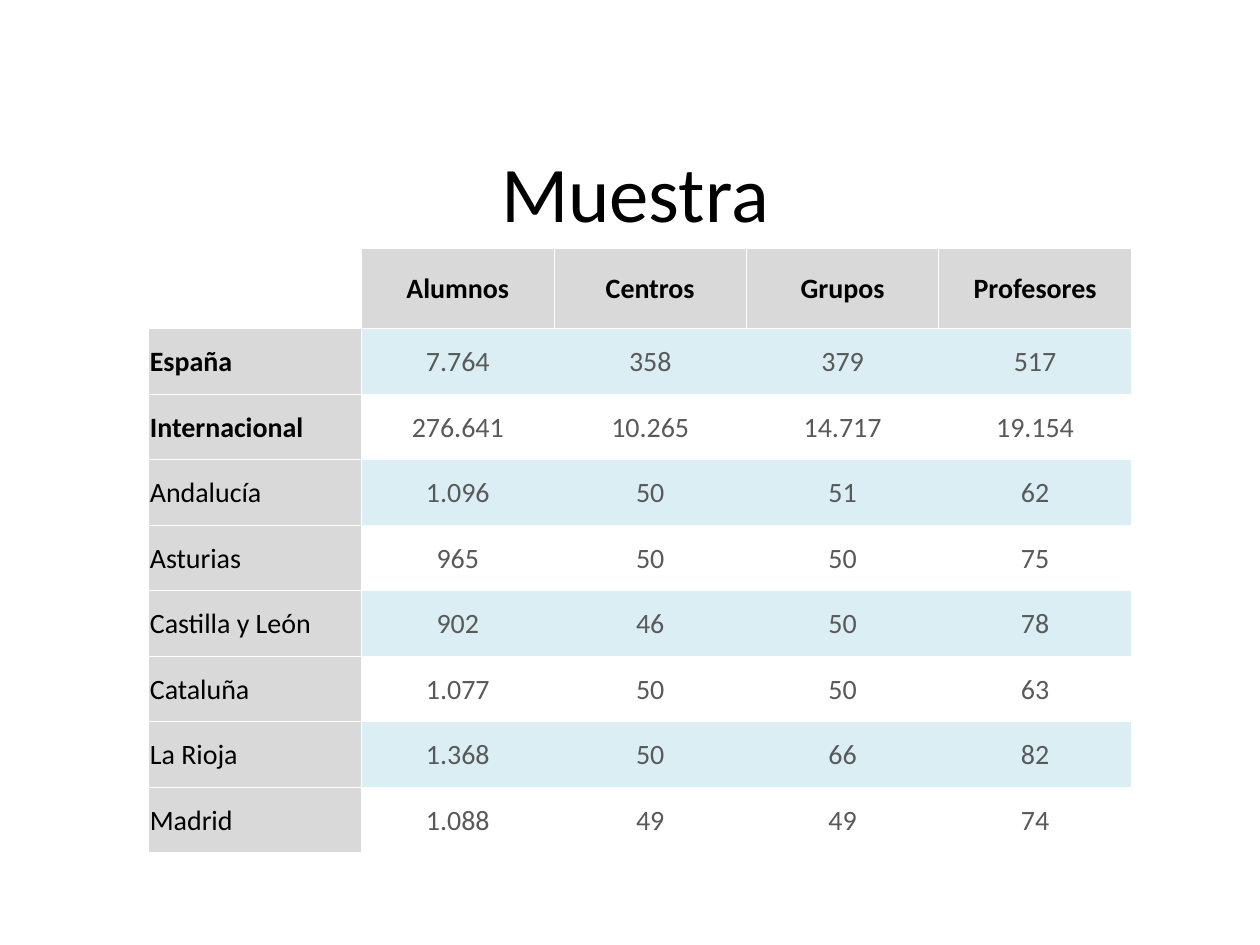
from dataclasses import dataclass

from lxml.etree import SubElement
from pptx import Presentation
from pptx.dml.color import RGBColor as Rgb
from pptx.enum.text import MSO_ANCHOR as Anchor, PP_ALIGN as Align
from pptx.oxml.ns import qn
from pptx.util import Inches, Pt


@dataclass(frozen=True)
class Theme:
    font: str = "Calibri"
    title_size: float = 45
    table_size: float = 16
    ink: str = "000000"
    figure_ink: str = "595959"
    heading_fill: str = "D9D9D9"
    band_fill: str = "DBEEF4"
    rule: str = "FFFFFF"
    rule_width: float = 0.5
    plain_style: str = "{2D5ABB26-0587-4C30-8999-92F81FD0307C}"


@dataclass(frozen=True)
class Grid:
    left: float = 1.18
    top: float = 1.97
    width: float = 7.8
    height: float = 4.8
    label_width: float = 1.69
    header_height: float = 0.64


@dataclass(frozen=True)
class Region:
    name: str
    figures: tuple[str, ...]
    is_total: bool = False


@dataclass(frozen=True)
class CellLook:
    ink: str
    fill: str | None
    align: Align = Align.CENTER
    bold: bool = False
    ruled: bool = False


THEME = Theme()
GRID = Grid()
HEADINGS = ("Alumnos", "Centros", "Grupos", "Profesores")
REGIONS = (
    Region("España", ("7.764", "358", "379", "517"), is_total=True),
    Region("Internacional", ("276.641", "10.265", "14.717", "19.154"), is_total=True),
    Region("Andalucía", ("1.096", "50", "51", "62")),
    Region("Asturias", ("965", "50", "50", "75")),
    Region("Castilla y León", ("902", "46", "50", "78")),
    Region("Cataluña", ("1.077", "50", "50", "63")),
    Region("La Rioja", ("1.368", "50", "66", "82")),
    Region("Madrid", ("1.088", "49", "49", "74")),
)


def write(paragraph, text: str, size: float, ink: str, align: Align, bold: bool = False) -> None:
    paragraph.text = text
    paragraph.alignment = align
    font = paragraph.font
    font.name, font.size, font.bold = THEME.font, Pt(size), bold
    font.color.rgb = Rgb.from_string(ink)


def rule_cell(cell) -> None:
    """Draw a thin rule on all four sides; call before setting the fill."""
    properties = cell._tc.get_or_add_tcPr()
    for side in ("a:lnL", "a:lnR", "a:lnT", "a:lnB"):
        line = SubElement(properties, qn(side), w=str(Pt(THEME.rule_width)))
        SubElement(SubElement(line, qn("a:solidFill")), qn("a:srgbClr"), val=THEME.rule)


def fill_cell(cell, text: str, look: CellLook) -> None:
    if look.ruled:
        rule_cell(cell)
    if look.fill:
        cell.fill.solid()
        cell.fill.fore_color.rgb = Rgb.from_string(look.fill)
    else:
        cell.fill.background()
    cell.vertical_anchor = Anchor.MIDDLE
    cell.margin_left = cell.margin_right = cell.margin_top = Inches(0.01)
    cell.margin_bottom = 0
    write(cell.text_frame.paragraphs[0], text, THEME.table_size, look.ink, look.align, look.bold)


def add_title(slide, text: str) -> None:
    frame = slide.shapes.add_textbox(
        Inches(1.3), Inches(1.3), Inches(7.48), Inches(0.64)
    ).text_frame
    frame.word_wrap = True
    frame.vertical_anchor = Anchor.BOTTOM
    write(frame.paragraphs[0], text, THEME.title_size, THEME.ink, Align.CENTER)


def add_plain_table(slide, rows: int, columns: int):
    """Add a table without style or banding, sized to the grid."""
    table = slide.shapes.add_table(
        rows, columns,
        Inches(GRID.left), Inches(GRID.top), Inches(GRID.width), Inches(GRID.height),
    ).table
    table.first_row = table.horz_banding = False
    table._tbl.tblPr.find(qn("a:tableStyleId")).text = THEME.plain_style

    figure_width = (GRID.width - GRID.label_width) / (columns - 1)
    for index, column in enumerate(table.columns):
        column.width = Inches(figure_width if index else GRID.label_width)
    region_height = (GRID.height - GRID.header_height) / (rows - 1)
    for index, row in enumerate(table.rows):
        row.height = Inches(region_height if index else GRID.header_height)
    return table


def add_sample_table(slide) -> None:
    table = add_plain_table(slide, len(REGIONS) + 1, len(HEADINGS) + 1)
    corner = CellLook(THEME.ink, None, ruled=True)
    heading = CellLook(THEME.ink, THEME.heading_fill, bold=True, ruled=True)
    fill_cell(table.cell(0, 0), "", corner)
    for column, text in enumerate(HEADINGS, start=1):
        fill_cell(table.cell(0, column), text, heading)

    for row, region in enumerate(REGIONS, start=1):
        label = CellLook(THEME.ink, THEME.heading_fill, Align.LEFT, region.is_total, ruled=True)
        figure = CellLook(THEME.figure_ink, THEME.band_fill if row % 2 else None)
        fill_cell(table.cell(row, 0), region.name, label)
        for column, value in enumerate(region.figures, start=1):
            fill_cell(table.cell(row, column), value, figure)


def main() -> None:
    deck = Presentation()
    deck.slide_width, deck.slide_height = Inches(10), Inches(7.5)
    slide = deck.slides.add_slide(deck.slide_layouts[6])
    add_sample_table(slide)
    add_title(slide, "Muestra")
    deck.save("out.pptx")


if __name__ == "__main__":
    main()
